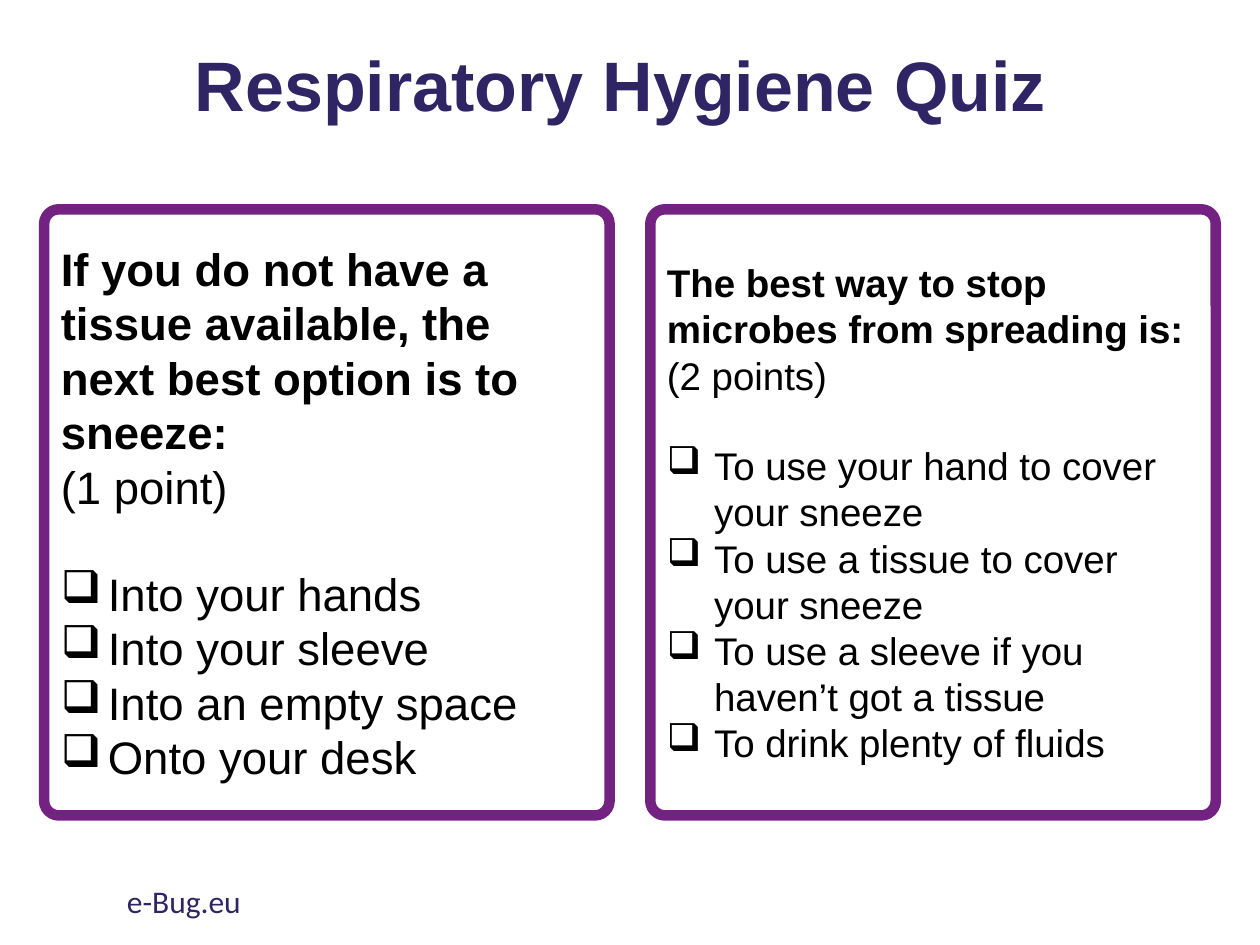
from pptx import Presentation
from pptx.dml.color import RGBColor
from pptx.enum.shapes import MSO_SHAPE as Form
from pptx.enum.text import MSO_ANCHOR as Anchor, PP_ALIGN as Align
from pptx.oxml import parse_xml
from pptx.oxml.ns import nsdecls
from pptx.util import Cm, Pt


def color(code):
    return RGBColor.from_string(code)


class Quiz:
    """Holds the style and the current slide, and draws its elements."""

    navy, plum, black = "302564", "732281", "000000"
    face, foot = "Arial", "Calibri"
    hang, stop = Cm(0.95), Cm(1.27)

    def __init__(self, slide):
        self.slide = slide

    def run(self, para, text, size, tint, face, bold=False):
        run = para.add_run()
        run.text = text
        font = run.font
        font.name, font.size, font.bold = face, Pt(size), bold
        font.color.rgb = color(tint)

    def label(self, box, text, size, face, bold=False, align=Align.LEFT,
              anchor=Anchor.TOP, lead=1.0):
        frame = self.slide.shapes.add_textbox(*map(Cm, box)).text_frame
        frame.word_wrap = True
        frame.vertical_anchor = anchor
        para = frame.paragraphs[0]
        para.alignment, para.line_spacing = align, lead
        self.run(para, text, size, self.navy, face, bold)

    def bullet(self, para):
        props = para._p.get_or_add_pPr()
        props.set("marL", str(self.hang))
        props.set("indent", str(-self.hang))
        space = nsdecls("a")
        props.append(parse_xml(f'<a:buChar {space} char="❑"/>'))
        props.append(parse_xml(
            f'<a:tabLst {space}><a:tab pos="{self.stop}" algn="l"/></a:tabLst>'))

    def panel(self, box, size, ask, score, picks):
        shape = self.slide.shapes.add_shape(Form.ROUNDED_RECTANGLE, *map(Cm, box))
        shape.adjustments[0] = 0.026
        shape.shadow.inherit = False
        shape.fill.background()
        shape.line.color.rgb = color(self.plum)
        shape.line.width = Pt(6)
        frame = shape.text_frame
        frame.word_wrap = True
        frame.vertical_anchor = Anchor.MIDDLE
        for i, text in enumerate([ask, score, *picks]):
            para = frame.add_paragraph() if i else frame.paragraphs[0]
            para.alignment = Align.LEFT
            if i > 1:
                self.bullet(para)
            if i == 2:
                para.space_before = Pt(round(size * 1.15, 1))
            self.run(para, text, size, self.black, self.face, bold=i == 0)


def main():
    deck = Presentation()
    deck.slide_width, deck.slide_height = Cm(25.4), Cm(19.05)
    quiz = Quiz(deck.slides.add_slide(deck.slide_layouts[6]))
    quiz.label((1.75, 0.63, 21.9, 2.31), "Respiratory Hygiene Quiz ", 40, quiz.face,
               True, Align.CENTER, Anchor.MIDDLE, 0.9)
    cards = [
        (26, "If you do not have a tissue available, the next best option is to sneeze:",
         "(1 point)",
         ["Into your hands", "Into your sleeve", "Into an empty space",
          "Onto your desk"]),
        (22, "The best way to stop microbes from spreading is:", "(2 points)",
         ["To use your hand to cover your sneeze",
          "To use a tissue to cover your sneeze",
          "To use a sleeve if you haven’t got a tissue",
          "To drink plenty of fluids"]),
    ]
    left, top, width, height, gap = 0.89, 4.22, 11.4, 12.22, 0.82
    for i, card in enumerate(cards):
        quiz.panel((left + i * (width + gap), top, width, height), *card)
    quiz.label((2.31, 17.65, 8.59, 1.02), "e-Bug.eu", 18, quiz.foot)
    deck.save("out.pptx")


if __name__ == "__main__":
    main()
